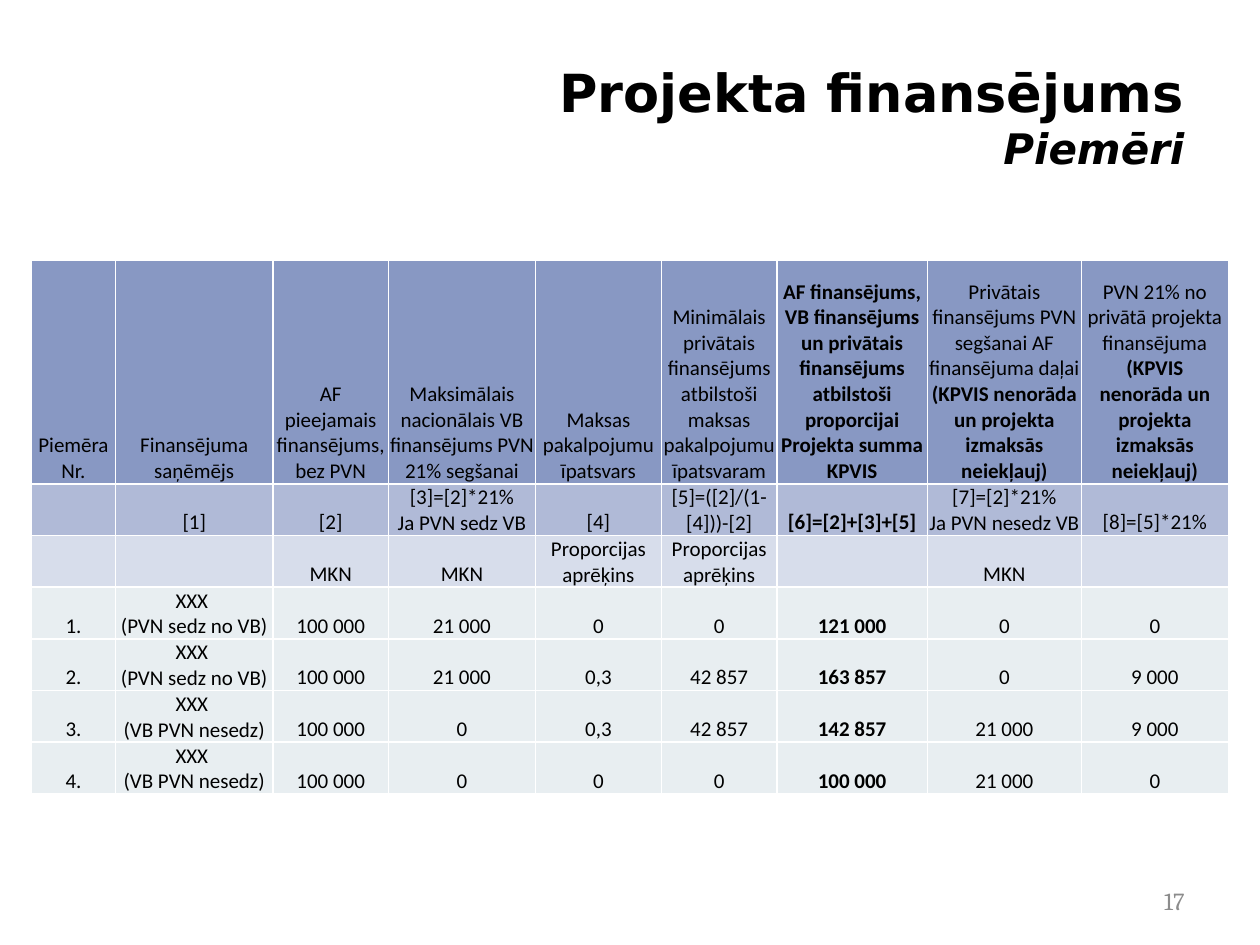
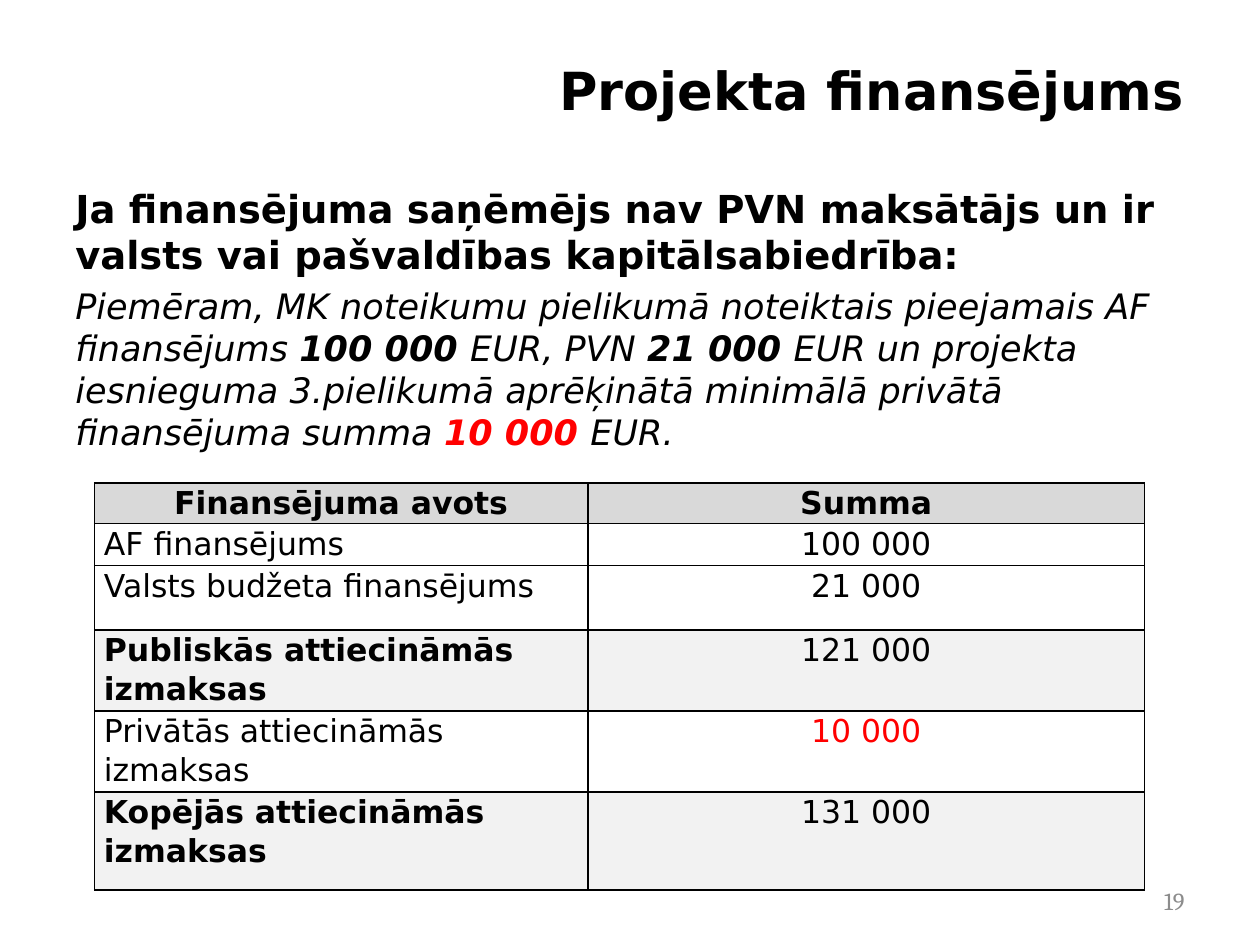
import pptx
import pptx.dml.color
import pptx.enum.text
import pptx.oxml
import pptx.oxml.ns
import pptx.util
from pptx.util import Pt

ALIGN = pptx.enum.text.PP_ALIGN
ANCHOR = pptx.enum.text.MSO_ANCHOR

COLORS = {
    "black": "000000", "white": "FFFFFF", "red": "FF0000", "number": "8C8C8C",
    "header": "8898C3", "formula": "B0BAD7", "source": "D7DDEB", "example": "E8EEF1",
    "grey": "D9D9D9", "light grey": "F2F2F2",
}
BASE = {"name": "DejaVu Sans", "size": 18, "bold": False, "italic": False, "color": "black"}
BOLD = {"bold": True}
TITLE = {**BASE, "size": 30, "bold": True}
SUBTITLE = {"size": 24, "italic": True}
EXAMPLE_TEXT = {**BASE, "size": 20, "italic": True}
NUMBER = {**BASE, "name": "Cambria", "size": 14, "color": "number"}
GRID_TEXT = {**BASE, "name": "Calibri", "size": 12}

# Runs are (text, differences from the base style); "\v" breaks a line.
HEADING = "Projekta finansējums"
NOT_IN_COSTS = ("(KPVIS nenorāda un projekta izmaksās neiekļauj)", BOLD)
PAID = "XXX \n(PVN sedz no VB)"
UNPAID = "XXX \n(VB PVN nesedz)"

EXAMPLE_WIDTHS = [48, 90, 66, 84, 72, 66, 86, 88, 84]
TOTAL_COLUMN = 6
EXAMPLE_ROWS = [  # fill, height, cells
    ("header", 128, [
        "Piemēra Nr.", "Finansējuma saņēmējs", "AF pieejamais finansējums, bez PVN",
        "Maksimālais nacionālais VB finansējums PVN 21% segšanai",
        "Maksas pakalpojumu īpatsvars",
        "Minimālais privātais finansējums atbilstoši maksas pakalpojumu īpatsvaram",
        "AF finansējums, VB finansējums un privātais finansējums atbilstoši proporcijai"
        "\vProjekta summa KPVIS",
        [("Privātais finansējums PVN segšanai AF finansējuma daļai\v", {}), NOT_IN_COSTS],
        [("PVN 21% no privātā projekta finansējuma\v", {}), NOT_IN_COSTS]]),
    ("formula", 25, ["", "[1]", "[2]", "[3]=[2]*21%\vJa PVN sedz VB", "[4]",
                     "[5]=([2]/(1-[4]))-[2]", "[6]=[2]+[3]+[5]",
                     "[7]=[2]*21%\vJa PVN nesedz VB", "[8]=[5]*21%"]),
    ("source", 26, ["", "", "MKN", "MKN", "Proporcijas aprēķins", "Proporcijas aprēķins",
                    "", "MKN", ""]),
    ("example", 24, ["1.", PAID, "100 000", "21 000", "0", "0", "121 000", "0", "0"]),
    ("example", 24, ["2.", PAID, "100 000", "21 000", "0,3", "42 857", "163 857", "0", "9 000"]),
    ("example", 24, ["3.", UNPAID, "100 000", "0", "0,3", "42 857", "142 857", "21 000", "9 000"]),
    ("example", 24, ["4.", UNPAID, "100 000", "0", "0", "0", "100 000", "21 000", "0"]),
]

CONDITION = [("Ja finansējuma saņēmējs nav PVN maksātājs un ir valsts vai pašvaldības "
              "kapitālsabiedrība:", {"size": 22, "bold": True, "italic": False})]
CASE = [
    ("Piemēram, MK noteikumu pielikumā noteiktais pieejamais AF finansējums ", {}),
    ("100 000 ", BOLD), ("EUR, PVN ", {}), ("21 000 ", BOLD),
    ("EUR un projekta iesnieguma 3.pielikumā aprēķinātā minimālā privātā "
     "finansējuma summa ", {}),
    ("10 000 ", {"bold": True, "color": "red"}), ("EUR.", {}),
]
SUM_WIDTHS = [282, 318]
SUM_ROWS = [  # fill, height, label, label style, sum, sum style
    ("grey", 22, "Finansējuma avots", BOLD, "Summa", BOLD),
    (None, 24, "AF finansējums", {}, "100 000", {}),
    (None, 37, "Valsts budžeta finansējums", {}, "21 000", {}),
    ("light grey", 37, "Publiskās attiecināmās izmaksas", BOLD, "121 000", {}),
    (None, 33, "Privātās attiecināmās izmaksas", {}, "10 000", {"color": "red"}),
    ("light grey", 56, "Kopējās attiecināmās izmaksas", BOLD, "131 000", {}),
]


def rgb(name):
    return pptx.dml.color.RGBColor.from_string(COLORS[name])


def set_font(font, style):
    for key, value in style.items():
        if key == "color":
            font.color.rgb = rgb(value)
        else:
            setattr(font, key, Pt(value) if key == "size" else value)


def write_text(text_frame, paragraphs, base, **paragraph_format):
    """Fill a text frame from a list of paragraphs, each a list of runs."""
    for index, runs in enumerate(paragraphs):
        paragraph = text_frame.add_paragraph() if index else text_frame.paragraphs[0]
        for key, value in paragraph_format.items():
            setattr(paragraph, key, value)
        for text, style in runs:
            for part_index, part in enumerate(text.split("\v")):
                if part_index:
                    paragraph.add_line_break()
                if part:
                    run = paragraph.add_run()
                    run.text = part
                    set_font(run.font, {**base, **style})


def place(shape, left, top, width, height):
    for side, value in zip(("left", "top", "width", "height"), (left, top, width, height)):
        setattr(shape, side, Pt(value))


def add_text_box(slide, box, anchor, paragraphs, base, **paragraph_format):
    text_frame = slide.shapes.add_textbox(*map(Pt, box)).text_frame
    text_frame.word_wrap = True
    text_frame.vertical_anchor = anchor
    write_text(text_frame, paragraphs, base, **paragraph_format)
    return text_frame


def add_slide(presentation, title_runs, number, title_bottom_margin=3.6):
    slide = presentation.slides.add_slide(presentation.slide_layouts[5])
    title = slide.shapes.title
    place(title, 144, 21.6, 540, 90)
    title.text_frame.auto_size = pptx.enum.text.MSO_AUTO_SIZE.NONE
    title.text_frame.vertical_anchor = ANCHOR.MIDDLE
    title.text_frame.margin_bottom = Pt(title_bottom_margin)
    write_text(title.text_frame, [title_runs], TITLE, alignment=ALIGN.RIGHT)
    add_text_box(slide, (516, 500.4, 168, 28.8), ANCHOR.MIDDLE, [[(number, {})]], NUMBER,
                 alignment=ALIGN.RIGHT)
    return slide


def add_grid(slide, left, top, widths, heights):
    table = slide.shapes.add_table(len(heights), len(widths), Pt(left), Pt(top),
                                   Pt(sum(widths)), Pt(sum(heights))).table
    table.first_row = table.horz_banding = False
    for column, width in zip(table.columns, widths):
        column.width = Pt(width)
    for row, height in zip(table.rows, heights):
        row.height = Pt(height)
    return table


def format_cell(cell, fill, border, anchor, margins):
    properties = cell._tc.get_or_add_tcPr()
    for side in "LRTB":
        properties.append(pptx.oxml.parse_xml(
            f'<a:ln{side} {pptx.oxml.ns.nsdecls("a")} w="{Pt(1)}"><a:solidFill>'
            f'<a:srgbClr val="{COLORS[border]}"/></a:solidFill></a:ln{side}>'))
    if fill:
        cell.fill.solid()
        cell.fill.fore_color.rgb = rgb(fill)
    else:
        cell.fill.background()
    cell.vertical_anchor = anchor
    for side, value in zip(("left", "top", "right", "bottom"), margins):
        setattr(cell, f"margin_{side}", Pt(value))


def build_examples(presentation):
    slide = add_slide(presentation, [(HEADING + "\v", {}), ("Piemēri", SUBTITLE)], "17")
    table = add_grid(slide, 18, 148.5, EXAMPLE_WIDTHS, [row[1] for row in EXAMPLE_ROWS])
    for row_index, (fill, _, contents) in enumerate(EXAMPLE_ROWS):
        for column_index, content in enumerate(contents):
            cell = table.cell(row_index, column_index)
            format_cell(cell, fill, "white", ANCHOR.BOTTOM, (0.7, 0.7, 0.7, 0))
            style = BOLD if column_index == TOTAL_COLUMN else {}
            if isinstance(content, str):
                paragraphs = [[(line, style)] for line in content.split("\n")]
            else:
                paragraphs = [content]
            write_text(cell.text_frame, paragraphs, GRID_TEXT, alignment=ALIGN.CENTER)


def build_sums(presentation):
    slide = add_slide(presentation, [(HEADING, {})], "19", title_bottom_margin=35)
    body = add_text_box(slide, (36, 102, 648, 380), ANCHOR.TOP, [CONDITION, CASE], EXAMPLE_TEXT)
    body.paragraphs[1].space_before = Pt(4)
    table = add_grid(slide, 54, 276, SUM_WIDTHS, [row[1] for row in SUM_ROWS])
    for row_index, (fill, _, label, label_style, amount, amount_style) in enumerate(SUM_ROWS):
        label_alignment = ALIGN.LEFT if row_index else ALIGN.CENTER
        cells = [(label, label_style, label_alignment), (amount, amount_style, ALIGN.CENTER)]
        for column_index, (text, style, alignment) in enumerate(cells):
            cell = table.cell(row_index, column_index)
            format_cell(cell, fill, "black", ANCHOR.TOP, (5.4, 0, 5.4, 0))
            write_text(cell.text_frame, [[(text, style)]], BASE, alignment=alignment,
                       line_spacing=1.07, space_after=Pt(8))


def main():
    presentation = pptx.Presentation()
    presentation.slide_width, presentation.slide_height = Pt(720), Pt(540)
    build_examples(presentation)
    build_sums(presentation)
    presentation.save("out.pptx")


if __name__ == "__main__":
    main()
